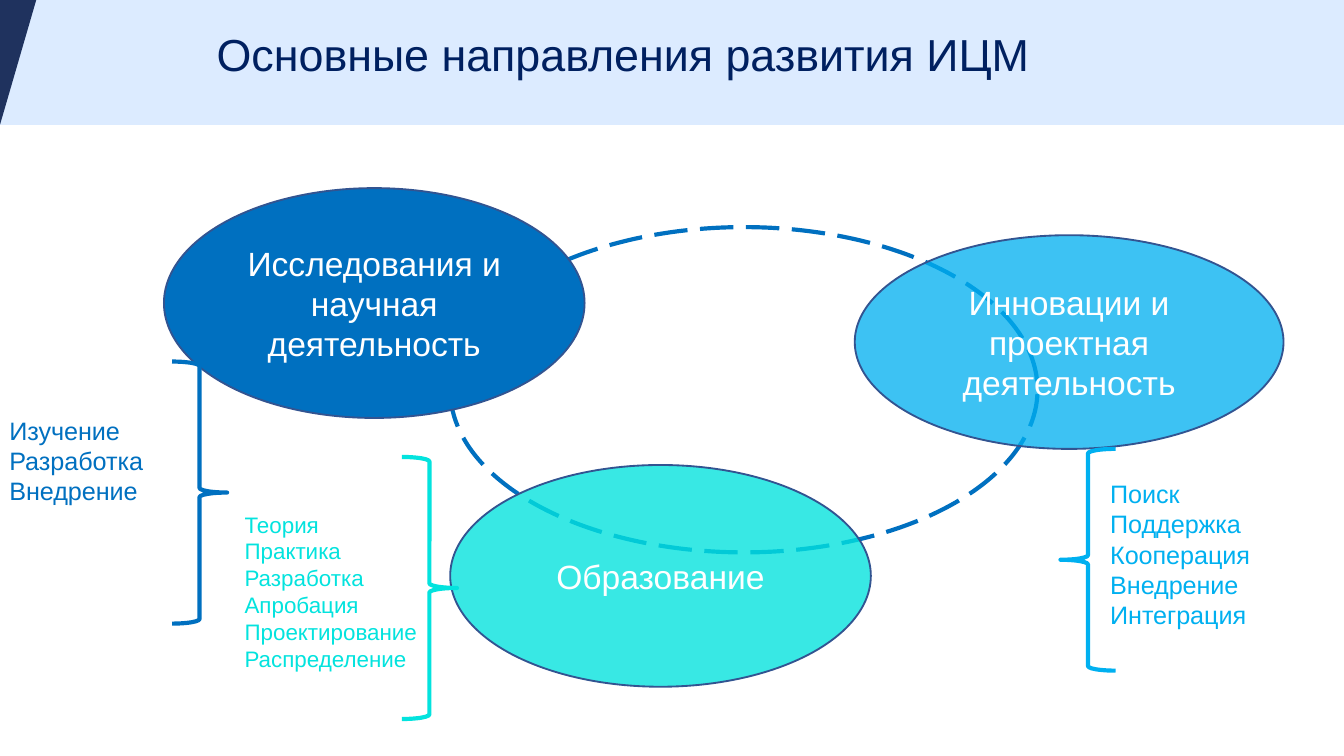
from dataclasses import dataclass

from lxml.etree import SubElement
from pptx import Presentation
from pptx.dml.color import RGBColor
from pptx.enum.dml import MSO_LINE
from pptx.enum.shapes import MSO_SHAPE
from pptx.enum.text import MSO_ANCHOR, PP_ALIGN
from pptx.oxml.ns import qn
from pptx.util import Inches, Pt


@dataclass(frozen=True)
class Theme:
    font: str = "Arial"
    navy: str = "002060"
    wedge: str = "1F325E"
    band: str = "DCEBFF"
    edge: str = "325491"
    blue: str = "0070C0"
    sky: str = "00B0F0"
    aqua: str = "03E3DE"
    white: str = "FFFFFF"
    head: float = 24
    body: float = 18
    note: float = 13.5
    small: float = 12


THEME = Theme()


def rgb(code):
    return RGBColor.from_string(code)


def paint(shape, fill=None, line=None, width=1, alpha=None):
    """Set fill and outline; alpha is the opacity in percent."""
    shape.shadow.inherit = False
    if fill:
        shape.fill.solid()
        shape.fill.fore_color.rgb = rgb(fill)
    else:
        shape.fill.background()
    if alpha:
        tint = shape.fill._xPr.find(qn("a:solidFill"))[0]
        SubElement(tint, qn("a:alpha"), val=str(alpha * 1000))
    if line:
        shape.line.color.rgb = rgb(line)
        shape.line.width = Pt(width)
    else:
        shape.line.fill.background()


def add_form(slide, kind, box, **look):
    shape = slide.shapes.add_shape(kind, *map(Inches, box))
    paint(shape, **look)
    return shape


def write(shape, lines, size, color, align=PP_ALIGN.LEFT,
          anchor=MSO_ANCHOR.TOP, wrap=True):
    """Fill a shape with one paragraph per line."""
    frame = shape.text_frame
    frame.text = "\n".join(lines)
    frame.word_wrap = wrap
    frame.vertical_anchor = anchor
    frame.margin_left = frame.margin_right = Inches(0.07)
    frame.margin_top = frame.margin_bottom = Inches(0.04)
    for para in frame.paragraphs:
        para.alignment = align
        para.font.name = THEME.font
        para.font.size = Pt(size)
        para.font.color.rgb = rgb(color)


def add_head(slide, text):
    """Draw the band with its wedge, then the title on top."""
    add_form(slide, MSO_SHAPE.RECTANGLE, (0, 0, 10, 0.93), fill=THEME.band)
    pen = slide.shapes.build_freeform(0, 0)
    pen.add_line_segments([(Inches(0.27), 0), (0, Inches(0.93))])
    paint(pen.convert_to_shape(), fill=THEME.wedge)

    title = slide.shapes.title
    title.left, title.top = Inches(0.69), Inches(0.2)
    title.width, title.height = Inches(7.89), Inches(0.5)
    write(title, [text], THEME.head, THEME.navy, PP_ALIGN.CENTER)
    title.text_frame.paragraphs[0].line_spacing = 0.9
    slide.shapes._spTree.append(title._element)


def add_topic(slide, text, box, color, alpha=None):
    oval = add_form(slide, MSO_SHAPE.OVAL, box, fill=color,
                    line=THEME.edge, alpha=alpha)
    write(oval, [text], THEME.body, THEME.white, PP_ALIGN.CENTER,
          MSO_ANCHOR.MIDDLE)


def add_brace(slide, kind, box, color):
    add_form(slide, kind, box, line=color, width=2.25)


def add_list(slide, lines, box, size, color, wrap=True):
    area = slide.shapes.add_textbox(*map(Inches, box))
    write(area, lines, size, color, wrap=wrap)


def main():
    deck = Presentation()
    deck.slide_width = Inches(10)
    deck.slide_height = deck.slide_width * 9 // 16
    slide = deck.slides.add_slide(deck.slide_layouts[5])
    add_head(slide, "Основные направления развития ИЦМ")

    # Dashed ring that links the topics
    ring = add_form(slide, MSO_SHAPE.OVAL, (3.35, 1.69, 4.37, 2.42),
                    line=THEME.blue, width=2.25)
    ring.line.dash_style = MSO_LINE.LONG_DASH

    # Topics
    add_topic(slide, "Исследования и научная деятельность",
              (1.22, 1.4, 3.13, 1.71), THEME.blue)
    add_topic(slide, "Образование", (3.35, 3.46, 3.13, 1.65), THEME.aqua, 79)
    add_topic(slide, "Инновации и проектная деятельность",
              (6.36, 1.75, 3.19, 1.59), THEME.sky, 76)

    # Braces
    right, left = MSO_SHAPE.RIGHT_BRACE, MSO_SHAPE.LEFT_BRACE
    add_brace(slide, right, (1.28, 2.69, 0.41, 1.95), THEME.blue)
    add_brace(slide, right, (2.99, 3.4, 0.41, 1.95), THEME.aqua)
    add_brace(slide, left, (7.89, 3.34, 0.41, 1.65), THEME.sky)

    # Lists beside the braces
    add_list(slide, ["Изучение", "Разработка", "Внедрение"],
             (0, 3.05, 1.24, 0.76), THEME.note, THEME.blue)
    add_list(slide, ["Теория", "Практика", "Разработка", "Апробация",
                     "Проектирование", "Распределение"],
             (1.75, 3.76, 1.54, 1.29), THEME.small, THEME.aqua)
    add_list(slide, ["Поиск", "Поддержка", "Кооперация", "Внедрение",
                     "Интеграция"],
             (8.19, 3.52, 1.21, 1.44), THEME.note, THEME.sky, wrap=False)

    deck.save("out.pptx")


if __name__ == "__main__":
    main()
